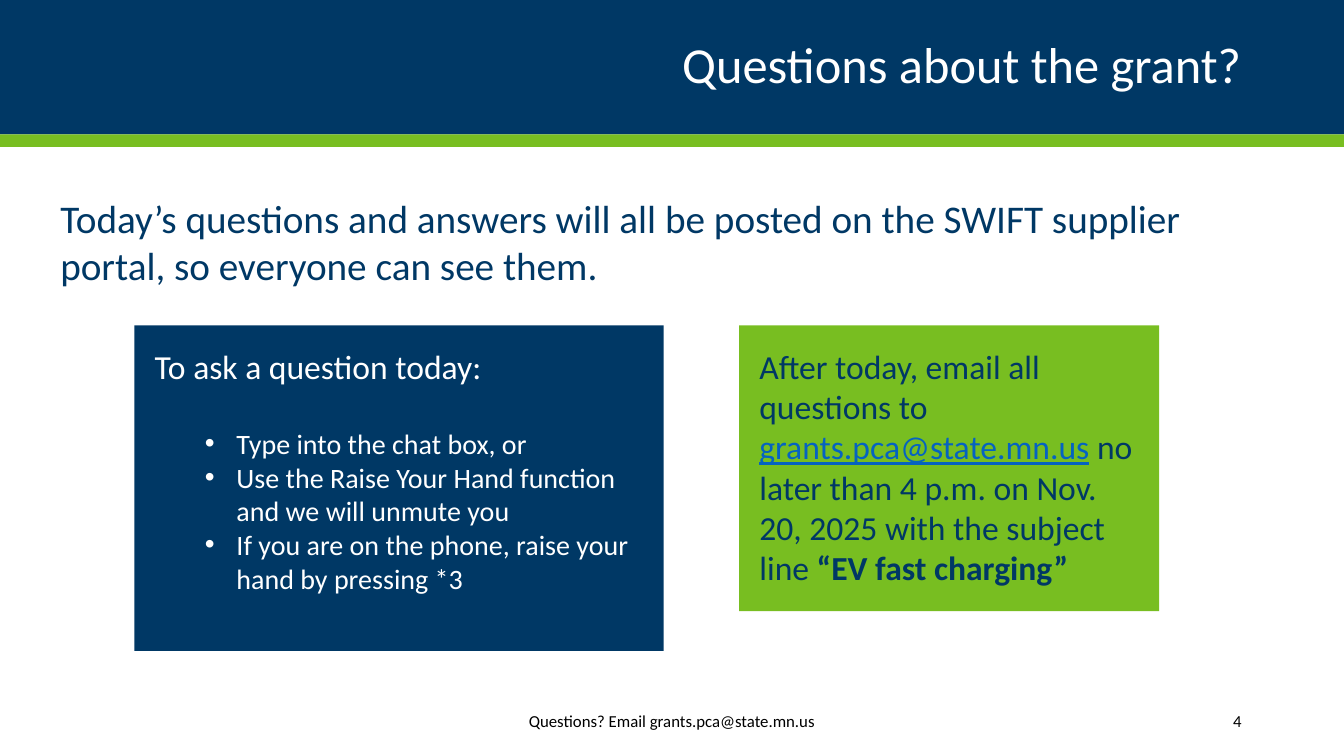
from dataclasses import dataclass

from lxml import etree
from pptx import Presentation
from pptx.dml.color import RGBColor
from pptx.enum.shapes import MSO_SHAPE
from pptx.enum.text import MSO_ANCHOR, MSO_AUTO_SIZE, PP_ALIGN
from pptx.oxml.ns import qn
from pptx.util import Pt

RECT = MSO_SHAPE.RECTANGLE
TOP, MIDDLE = MSO_ANCHOR.TOP, MSO_ANCHOR.MIDDLE
LEFT, CENTER, RIGHT = PP_ALIGN.LEFT, PP_ALIGN.CENTER, PP_ALIGN.RIGHT
FIXED = MSO_AUTO_SIZE.NONE


@dataclass(frozen=True)
class Theme:
    font: str = "Calibri"
    navy: str = "003865"
    green: str = "78BE21"
    white: str = "FFFFFF"
    black: str = "000000"
    link: str = "0563C1"
    title: int = 36
    lead: int = 28
    head: int = 24
    item: int = 20
    foot: int = 12


class Deck:
    def __init__(self, theme, width, height):
        self.theme = theme
        self.file = Presentation()
        self.file.slide_width, self.file.slide_height = Pt(width), Pt(height)
        self.slide = self.file.slides.add_slide(self.file.slide_layouts[5])

    def frame(self, shape, anchor, inset=None):
        frame = shape.text_frame
        frame.word_wrap = True
        frame.auto_size = FIXED
        frame.vertical_anchor = anchor
        if inset is not None:
            frame.margin_left = frame.margin_right = Pt(inset)
            frame.margin_top = frame.margin_bottom = Pt(inset)
        return frame

    def run(self, para, text, size, color, bold=False, line=False):
        run = para.add_run()
        run.text = text
        font = run.font
        font.name, font.size = self.theme.font, Pt(size)
        font.bold, font.underline = bold, line
        font.color.rgb = RGBColor.from_string(color)

    def title(self, text, box):
        shape = self.slide.shapes.title
        shape.left, shape.top, shape.width, shape.height = map(Pt, box)
        self.slide.shapes._spTree.append(shape._element)
        para = self.frame(shape, MIDDLE).paragraphs[0]
        para.alignment, para.line_spacing = RIGHT, 0.9
        self.run(para, text, self.theme.title, self.theme.white)

    def text(self, text, box, size, color, align=LEFT, anchor=TOP):
        shape = self.slide.shapes.add_textbox(*map(Pt, box))
        para = self.frame(shape, anchor).paragraphs[0]
        para.alignment = align
        self.run(para, text, size, color)

    def panel(self, box, fill):
        shape = self.slide.shapes.add_shape(RECT, *map(Pt, box))
        shape.shadow.inherit = False
        shape.fill.solid()
        shape.fill.fore_color.rgb = RGBColor.from_string(fill)
        shape.line.fill.background()
        frame = self.frame(shape, TOP, 14.4)
        frame.paragraphs[0].alignment = LEFT
        return frame

    def bullet(self, frame, text, size, color):
        para = frame.add_paragraph()
        para.alignment, para.level = LEFT, 1
        props = para._p.get_or_add_pPr()
        props.set("marL", str(Pt(58.5)))
        props.set("indent", str(Pt(-22.5)))
        etree.SubElement(props, qn("a:buFont")).set("typeface", "Arial")
        etree.SubElement(props, qn("a:buChar")).set("char", "•")
        self.run(para, text, size, color)


def main():
    theme = Theme()
    wide = 960
    deck = Deck(theme, wide, 540)

    deck.panel((0, 0, wide, 96), theme.navy)
    deck.panel((0, 96, wide, 9), theme.green)
    deck.title("Questions about the grant?", (66, 12, 828, 72))
    deck.text(
        "Today’s questions and answers will all be posted on the SWIFT "
        "supplier portal, so everyone can see them.",
        (36, 135.5, 888, 75), theme.lead, theme.navy)

    top = 232.5
    email = "grants.pca@state.mn.us"
    after = deck.panel((528, top, 300, 204), theme.green).paragraphs[0]
    deck.run(after, "After today, email all questions to ", theme.head, theme.navy)
    deck.run(after, email, theme.head, theme.link, line=True)
    deck.run(after, " no later than 4 p.m. on Nov. 20, 2025 with the subject line ",
             theme.head, theme.navy)
    deck.run(after, "“EV fast charging”", theme.head, theme.navy, bold=True)

    today = deck.panel((96, top, 378, 232.5), theme.navy)
    head = today.paragraphs[0]
    head.space_after = Pt(29)
    deck.run(head, "To ask a question today:", theme.head, theme.white)
    for item in (
        "Type into the chat box, or",
        "Use the Raise Your Hand function and we will unmute you",
        "If you are on the phone, raise your hand by pressing *3",
    ):
        deck.bullet(today, item, theme.item, theme.white)

    for text, left, width, align in (
        (f"Questions? Email {email}", 260, 440, CENTER),
        ("4", 779, 115, RIGHT),
    ):
        deck.text(text, (left, 500.5, width, 29), theme.foot, theme.black,
                  align, MIDDLE)

    deck.file.save("out.pptx")


if __name__ == "__main__":
    main()
